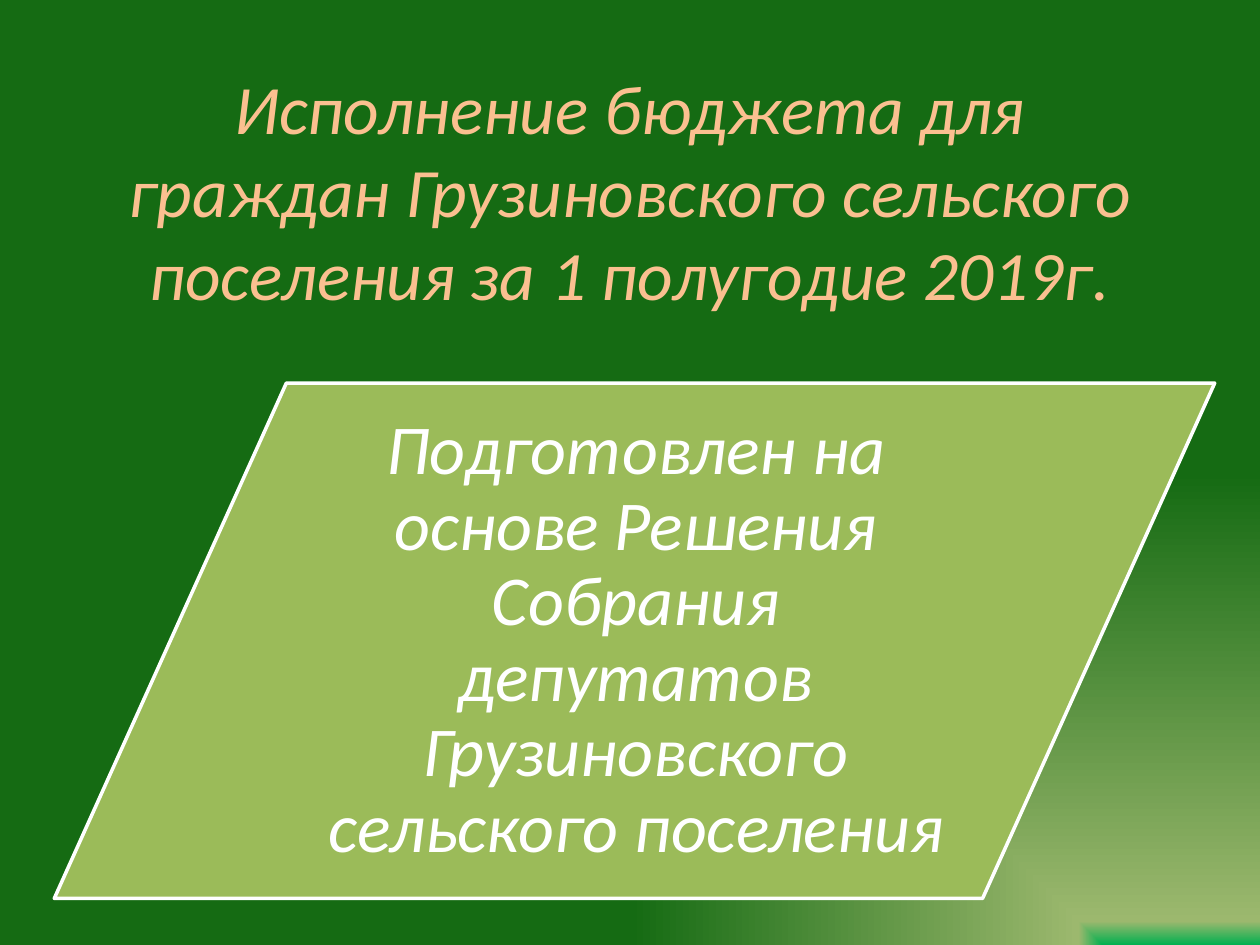
from pptx import Presentation
from pptx.dml.color import RGBColor
from pptx.enum import shapes, text
from pptx.oxml import parse_xml
from pptx.oxml.ns import nsdecls, qn
from pptx.util import Pt

TITLE = "Исполнение бюджета для граждан Грузиновского сельского поселения за 1 полугодие 2019г."
BASIS = "Подготовлен на основе Решения Собрания депутатов Грузиновского сельского поселения"
GRADIENT = [(0, "00B050"), (5, "9CB86E"), (100, "156B13")]

TITLE_BOX = (54, 43.2, 612, 130.3)
PANEL_BOX = (31, 218.9, 663.1, 294.5)
BASIS_BOX = (164.2, 218.9, 398.2, 294.5)


def color(hex_value):
    return RGBColor.from_string(hex_value)


def points(box):
    return [Pt(length) for length in box]


def set_background(slide, stops):
    """Fill the slide with a gradient that spreads from its lower right corner."""
    stop_xml = "".join(
        f'<a:gs pos="{percent * 1000}"><a:srgbClr val="{hex_value}"/></a:gs>'
        for percent, hex_value in stops
    )
    background = parse_xml(
        f'<p:bg {nsdecls("p", "a")}><p:bgPr><a:gradFill rotWithShape="1">'
        f"<a:gsLst>{stop_xml}</a:gsLst>"
        '<a:path path="rect"><a:fillToRect l="100000" t="100000"/></a:path>'
        '<a:tileRect r="-100000" b="-100000"/>'
        "</a:gradFill><a:effectLst/></p:bgPr></p:bg>"
    )
    slide.element.find(qn("p:cSld")).insert(0, background)


def write(shape, content, size, hex_value, spacing=1.0, inset=None):
    frame = shape.text_frame
    frame.word_wrap = True
    frame.auto_size = text.MSO_AUTO_SIZE.NONE
    frame.vertical_anchor = text.MSO_ANCHOR.MIDDLE
    if inset is not None:
        frame.margin_left = frame.margin_right = Pt(inset)
        frame.margin_top = frame.margin_bottom = Pt(inset)
    paragraph = frame.paragraphs[0]
    paragraph.alignment = text.PP_ALIGN.CENTER
    paragraph.line_spacing = spacing
    run = paragraph.add_run()
    run.text = content
    run.font.name = "Calibri"
    run.font.size = Pt(size)
    run.font.italic = True
    run.font.color.rgb = color(hex_value)


def main():
    presentation = Presentation()
    presentation.slide_width, presentation.slide_height = Pt(720), Pt(540)
    slide = presentation.slides.add_slide(presentation.slide_layouts[5])
    set_background(slide, GRADIENT)

    title = slide.shapes.title
    title.left, title.top, title.width, title.height = points(TITLE_BOX)
    write(title, TITLE, 39.6, "FAC090")

    panel = slide.shapes.add_shape(
        shapes.MSO_SHAPE.FLOWCHART_DATA, *points(PANEL_BOX)
    )
    panel.shadow.inherit = False
    panel.fill.solid()
    panel.fill.fore_color.rgb = color("9BBB59")
    panel.line.color.rgb = color("FFFFFF")
    panel.line.width = Pt(2)

    basis = slide.shapes.add_textbox(*points(BASIS_BOX))
    write(basis, BASIS, 40, "FFFFFF", spacing=0.9, inset=12)

    presentation.save("out.pptx")


if __name__ == "__main__":
    main()
